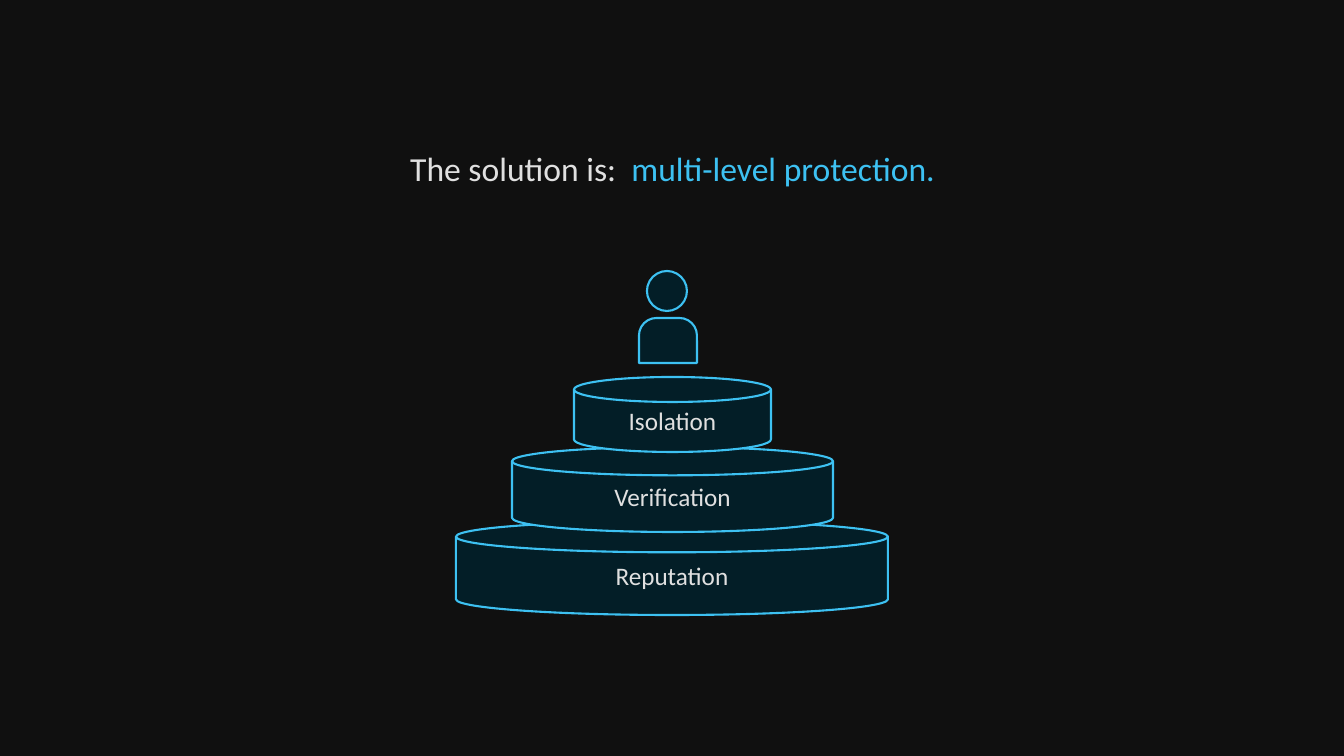
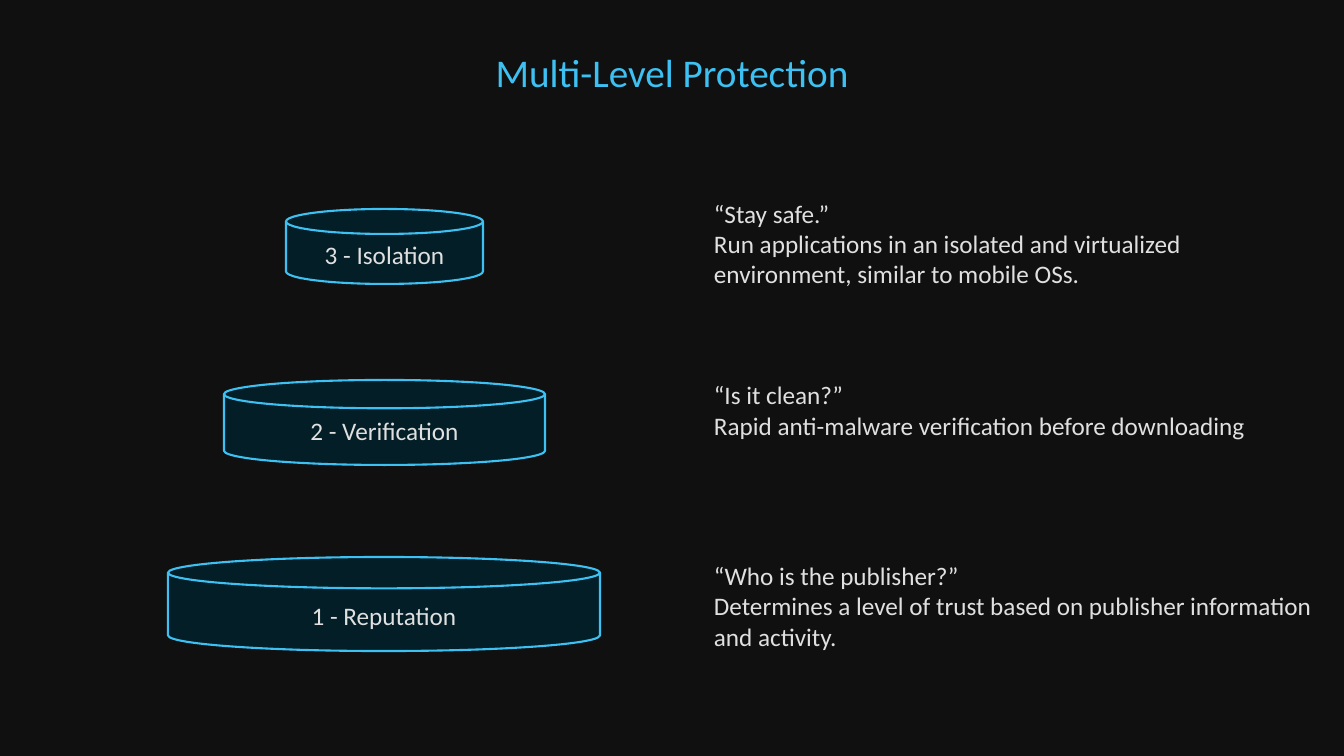
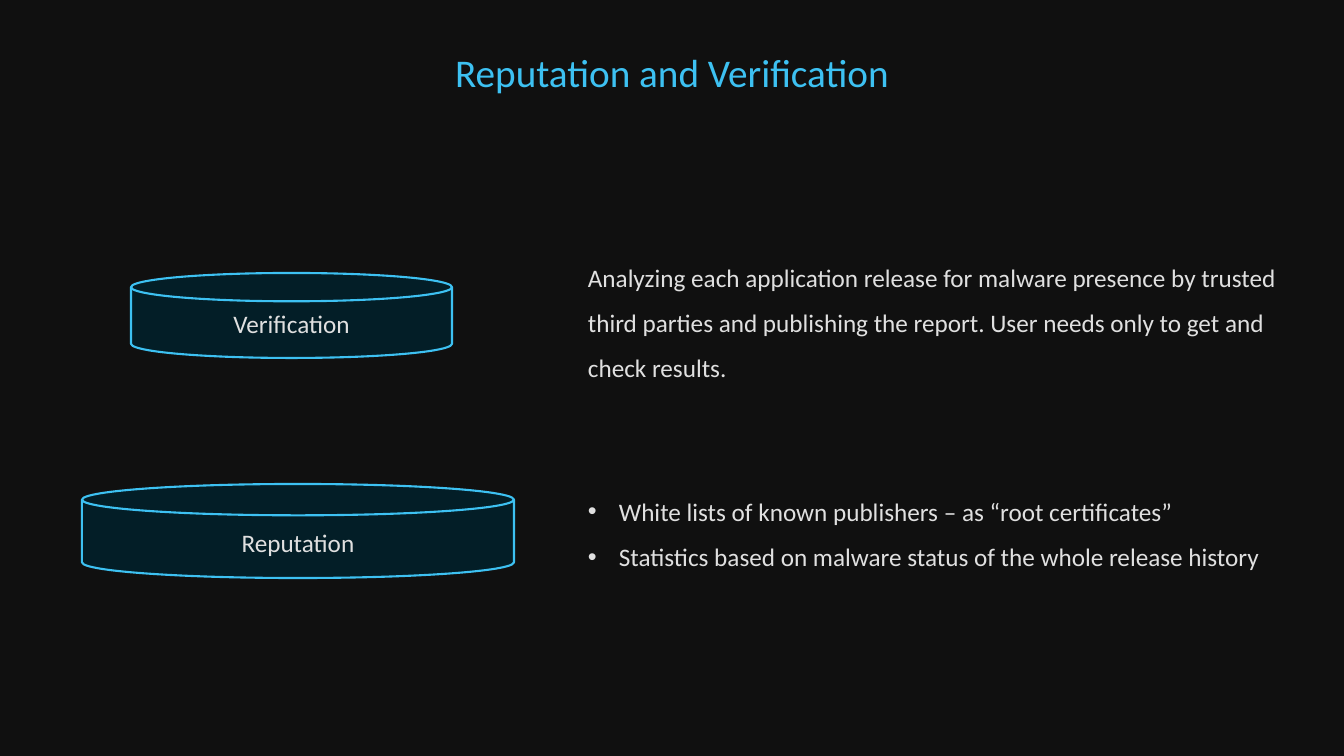
"""Build three slides on multi-level protection."""
from dataclasses import dataclass

import lxml.etree
import pptx
import pptx.dml.color
import pptx.enum.shapes
import pptx.enum.text
import pptx.oxml.ns
import pptx.presentation
import pptx.shapes.autoshape
import pptx.slide
import pptx.text.text
import pptx.util

EMU_PER_PX = 914400 / 100.8
SLIDE_WIDTH, SLIDE_HEIGHT = 1344, 756
BULLET_INDENT = 31

Shape = pptx.enum.shapes.MSO_SHAPE
Anchor = pptx.enum.text.MSO_ANCHOR
Align = pptx.enum.text.PP_ALIGN
Rgb = pptx.dml.color.RGBColor


@dataclass(frozen=True)
class Theme:
    """Colours, font and type sizes of the deck."""
    background: Rgb = Rgb.from_string("101010")
    panel: Rgb = Rgb.from_string("031E27")
    accent: Rgb = Rgb.from_string("3DC1F2")
    text: Rgb = Rgb.from_string("E0E0E0")
    font: str = "Calibri"
    title_size: int = 28
    statement_size: int = 24
    body_size: int = 18
    outline: float = 1.5


@dataclass(frozen=True)
class Box:
    """A rectangle in px."""
    left: int
    top: int
    width: int
    height: int


@dataclass(frozen=True)
class Level:
    """A protection level and the size of its disk."""
    name: str
    width: int
    height: int


@dataclass(frozen=True)
class Disk:
    """A level placed on a slide by its centre and top."""
    level: Level
    centre: int
    top: int
    anchor: Anchor
    prefix: str = ""


@dataclass(frozen=True)
class Line:
    """A paragraph with its spacing and bullet."""
    text: str
    before: int = 0
    spacing: float = 1.0
    bullet: bool = False


THEME = Theme()
TITLE_BOX = Box(234, 43, 876, 57)
REPUTATION = Level("Reputation", 432, 94)
VERIFICATION = Level("Verification", 321, 85)
ISOLATION = Level("Isolation", 197, 75)


def px(length: int) -> pptx.util.Emu:
    """Turn px into EMU."""
    return pptx.util.Emu(round(length * EMU_PER_PX))


def style_font(paragraph: pptx.text.text._Paragraph, size: int, colour: Rgb) -> None:
    """Set the font of a whole paragraph."""
    paragraph.font.name = THEME.font
    paragraph.font.size = pptx.util.Pt(size)
    paragraph.font.color.rgb = colour


def add_bullet(paragraph: pptx.text.text._Paragraph) -> None:
    """Give a paragraph a hanging bullet."""
    properties = paragraph._p.get_or_add_pPr()
    properties.set("marL", str(px(BULLET_INDENT)))
    properties.set("indent", str(-px(BULLET_INDENT)))
    qn = pptx.oxml.ns.qn
    lxml.etree.SubElement(properties, qn("a:buFont"), typeface="Arial")
    lxml.etree.SubElement(properties, qn("a:buChar"), char="•")


def add_text_frame(slide: pptx.slide.Slide, box: Box) -> pptx.text.text.TextFrame:
    """Add a wrapping text box that fits its text."""
    frame = slide.shapes.add_textbox(
        px(box.left), px(box.top), px(box.width), px(box.height)).text_frame
    frame.word_wrap = True
    frame.auto_size = pptx.enum.text.MSO_AUTO_SIZE.SHAPE_TO_FIT_TEXT
    return frame


def add_body(slide: pptx.slide.Slide, box: Box, lines: list[Line]) -> None:
    """Add body paragraphs."""
    frame = add_text_frame(slide, box)
    for index, line in enumerate(lines):
        paragraph = frame.add_paragraph() if index else frame.paragraphs[0]
        paragraph.text = line.text
        paragraph.line_spacing = line.spacing
        paragraph.space_before = pptx.util.Pt(line.before)
        if line.bullet:
            add_bullet(paragraph)
        style_font(paragraph, THEME.body_size, THEME.text)


def add_title(slide: pptx.slide.Slide, title: str) -> None:
    """Add the centred slide title."""
    paragraph = add_text_frame(slide, TITLE_BOX).paragraphs[0]
    paragraph.text = title
    paragraph.alignment = Align.CENTER
    style_font(paragraph, THEME.title_size, THEME.accent)


def add_statement(slide: pptx.slide.Slide, lead: str, answer: str) -> None:
    """Add a centred statement with an accented answer."""
    paragraph = add_text_frame(slide, Box(236, 143, 873, 50)).paragraphs[0]
    paragraph.alignment = Align.CENTER
    style_font(paragraph, THEME.statement_size, THEME.text)
    paragraph.add_run().text = lead
    accented = paragraph.add_run()
    accented.text = answer
    accented.font.color.rgb = THEME.accent


def add_panel(shapes: pptx.shapes.shapetree._BaseGroupShapes, kind: Shape,
              box: Box) -> pptx.shapes.autoshape.Shape:
    """Add a dark shape with an accent outline."""
    panel = shapes.add_shape(
        kind, px(box.left), px(box.top), px(box.width), px(box.height))
    panel.shadow.inherit = False
    panel.fill.solid()
    panel.fill.fore_color.rgb = THEME.panel
    panel.line.color.rgb = THEME.accent
    panel.line.width = pptx.util.Pt(THEME.outline)
    return panel


def add_disk(slide: pptx.slide.Slide, disk: Disk) -> None:
    """Add the labelled disk of a level."""
    level = disk.level
    box = Box(disk.centre - level.width // 2, disk.top, level.width, level.height)
    frame = add_panel(slide.shapes, Shape.FLOWCHART_MAGNETIC_DISK, box).text_frame
    frame.vertical_anchor = disk.anchor
    label = frame.paragraphs[0]
    label.text = disk.prefix + level.name
    label.alignment = Align.CENTER
    style_font(label, THEME.body_size, THEME.text)


def add_user(slide: pptx.slide.Slide) -> None:
    """Add the user figure as a group."""
    user = slide.shapes.add_group_shape()
    body = add_panel(user.shapes, Shape.ROUND_2_SAME_RECTANGLE, Box(639, 318, 58, 45))
    body.adjustments[0] = 0.39
    add_panel(user.shapes, Shape.OVAL, Box(647, 271, 40, 40))


def add_slide(deck: pptx.presentation.Presentation, disks: list[Disk]) -> pptx.slide.Slide:
    """Add a blank slide with its disks from back to front."""
    slide = deck.slides.add_slide(deck.slide_layouts[6])
    for disk in disks:
        add_disk(slide, disk)
    return slide


def build_solution(deck: pptx.presentation.Presentation) -> None:
    """Build the slide that stacks the levels under the user."""
    slide = add_slide(deck, [
        Disk(REPUTATION, 672, 521, Anchor.MIDDLE),
        Disk(VERIFICATION, 672, 447, Anchor.MIDDLE),
        Disk(ISOLATION, 672, 377, Anchor.MIDDLE),
    ])
    add_user(slide)
    add_statement(slide, "The solution is:  ", "multi-level protection.")


def build_levels(deck: pptx.presentation.Presentation) -> None:
    """Build the slide that explains each level."""
    slide = add_slide(deck, [
        Disk(REPUTATION, 384, 557, Anchor.BOTTOM, "1 - "),
        Disk(VERIFICATION, 384, 380, Anchor.BOTTOM, "2 - "),
        Disk(ISOLATION, 384, 209, Anchor.TOP, "3 - "),
    ])
    add_title(slide, "Multi-Level Protection")
    add_body(slide, Box(704, 193, 622, 468), [
        Line("“Stay safe.”"),
        Line("Run applications in an isolated and virtualized environment, "
             "similar to mobile OSs."),
        Line("“Is it clean?”", before=65),
        Line("Rapid anti-malware verification before downloading"),
        Line("“Who is the publisher?”", before=86),
        Line("Determines a level of trust based on publisher information "
             "and activity."),
    ])


def build_details(deck: pptx.presentation.Presentation) -> None:
    """Build the slide on reputation and verification."""
    slide = add_slide(deck, [
        Disk(REPUTATION, 298, 484, Anchor.BOTTOM),
        Disk(VERIFICATION, 291, 273, Anchor.BOTTOM),
    ])
    add_title(slide, "Reputation and Verification")
    add_body(slide, Box(578, 242, 753, 147), [
        Line("Analyzing each application release for malware presence by trusted "
             "third parties and publishing the report. User needs only to get and "
             "check results.", spacing=1.5),
    ])
    add_body(slide, Box(578, 476, 753, 102), [
        Line("White lists of known publishers – as “root certificates”",
             spacing=1.5, bullet=True),
        Line("Statistics based on malware status of the whole release history",
             spacing=1.5, bullet=True),
    ])


def main() -> None:
    """Build and save the deck."""
    deck = pptx.Presentation()
    deck.slide_width, deck.slide_height = px(SLIDE_WIDTH), px(SLIDE_HEIGHT)
    backdrop = deck.slide_master.background.fill
    backdrop.solid()
    backdrop.fore_color.rgb = THEME.background
    build_solution(deck)
    build_levels(deck)
    build_details(deck)
    deck.save("out.pptx")


if __name__ == "__main__":
    main()
